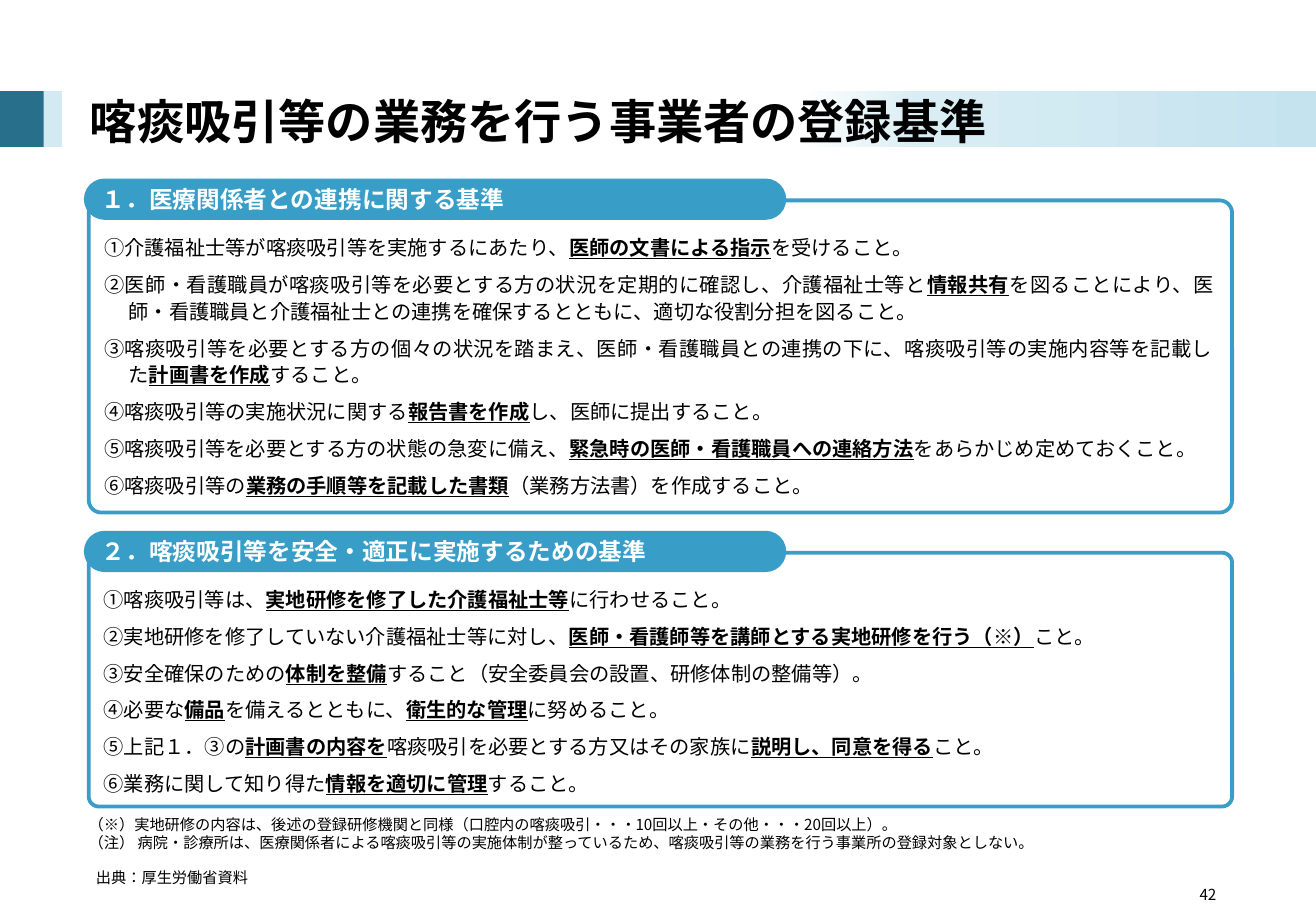
from collections import namedtuple
from copy import deepcopy
from dataclasses import dataclass

from lxml.etree import SubElement
from pptx import Presentation
from pptx.dml.color import RGBColor
from pptx.enum.lang import MSO_LANGUAGE_ID as Language
from pptx.enum.shapes import MSO_SHAPE as Shape
from pptx.enum.text import MSO_ANCHOR as Anchor, MSO_AUTO_SIZE as AutoSize, PP_ALIGN as Align
from pptx.oxml.ns import qn
from pptx.util import Emu, Pt

EMU_PER_PX = 9144
Box = namedtuple("Box", "left top width height")


@dataclass(frozen=True)
class Theme:
    font: str = "Noto Sans CJK JP"
    heading_font: str = "Cabin"
    ink: str = "000000"
    paper: str = "FFFFFF"
    accent: str = "399EC7"
    dark: str = "276F8B"
    pale: str = "D4EAF3"
    fade: tuple = ((0, "FFFFFF"), (0.23, "D9EDF4"), (1, "C5E3EF"))
    title_size: int = 28
    heading_size: int = 14
    body_size: int = 12
    note_size: int = 9
    border: float = 2.25


THEME = Theme()

TITLE = "喀痰吸引等の業務を行う事業者の登録基準"
COOPERATION = (
    "１．医療関係者との連携に関する基準",
    [
        "①介護福祉士等が喀痰吸引等を実施するにあたり、*医師の文書による指示*を受けること。",
        "②医師・看護職員が喀痰吸引等を必要とする方の状況を定期的に確認し、介護福祉士等と*情報共有*を図ることにより、"
        "医師・看護職員と介護福祉士との連携を確保するとともに、適切な役割分担を図ること。",
        "③喀痰吸引等を必要とする方の個々の状況を踏まえ、医師・看護職員との連携の下に、"
        "喀痰吸引等の実施内容等を記載した*計画書を作成*すること。",
        "④喀痰吸引等の実施状況に関する*報告書を作成*し、医師に提出すること。",
        "⑤喀痰吸引等を必要とする方の状態の急変に備え、*緊急時の医師・看護職員への連絡方法*をあらかじめ定めておくこと。",
        "⑥喀痰吸引等の*業務の手順等を記載した書類*（業務方法書）を作成すること。",
    ],
)
SAFETY = (
    "２．喀痰吸引等を安全・適正に実施するための基準",
    [
        "①喀痰吸引等は、*実地研修を修了した介護福祉士等*に行わせること。",
        "②実地研修を修了していない介護福祉士等に対し、*医師・看護師等を講師とする実地研修を行う（※）*こと。",
        "③安全確保のための*体制を整備*すること（安全委員会の設置、研修体制の整備等）。",
        "④必要な*備品*を備えるとともに、*衛生的な管理*に努めること。",
        "⑤上記１．③の*計画書の内容を*喀痰吸引を必要とする方又はその家族に*説明し、同意を得る*こと。",
        "⑥業務に関して知り得た*情報を適切に管理*すること。",
    ],
)
REMARKS = (
    "（※）実地研修の内容は、後述の登録研修機関と同様（口腔内の喀痰吸引・・・10回以上・その他・・・20回以上）。\n"
    "（注） 病院・診療所は、医療関係者による喀痰吸引等の実施体制が整っているため、"
    "喀痰吸引等の業務を行う事業所の登録対象としない。"
)
SOURCE = "出典：厚生労働省資料"
PAGE_NUMBER = "42"


def px(length):
    return Emu(length * EMU_PER_PX)


def color(value):
    return RGBColor.from_string(value)


def style(span, size, ink=THEME.ink, bold=False, underline=False, latin=THEME.font):
    font = span.font
    font.size, font.bold, font.underline = Pt(size), bold, underline
    font.color.rgb = color(ink)
    font.language_id = Language.JAPANESE
    font.name = latin
    SubElement(span._r.get_or_add_rPr(), qn("a:ea"), typeface=THEME.font)


def set_frame(frame, insets=(0, 0, 0, 0), anchor=Anchor.TOP, wrap=True):
    frame.auto_size = AutoSize.NONE
    frame.word_wrap = wrap
    frame.vertical_anchor = anchor
    frame.margin_left, frame.margin_top, frame.margin_right, frame.margin_bottom = map(px, insets)


def add_block(page, kind, box, fill, line=None, corner=None):
    block = page.shapes.add_shape(kind, *map(px, box))
    block.shadow.inherit = False
    block.fill.solid()
    block.fill.fore_color.rgb = color(fill)
    if line:
        block.line.color.rgb = color(line)
        block.line.width = Pt(THEME.border)
    else:
        block.line.fill.background()
    if corner is not None:
        block.adjustments[0] = corner
    return block


def add_note(page, box, text, align=Align.LEFT):
    frame = page.shapes.add_textbox(*map(px, box)).text_frame
    set_frame(frame)
    frame.text = text
    for para in frame.paragraphs:
        para.alignment = align
        for span in para.runs:
            style(span, THEME.note_size)


def fade_fill(fill):
    fill.gradient()
    fill.gradient_angle = 0
    stops = fill.gradient_stops
    stop_list = stops[0]._gs.getparent()
    stop_list.append(deepcopy(stops[0]._gs))
    for stop, (position, value) in zip(fill.gradient_stops, THEME.fade):
        stop.position = position
        stop.color.rgb = color(value)


def add_title_band(page, box):
    left, top, width, height = box
    add_block(page, Shape.RECTANGLE, Box(left, top, 38, height), THEME.dark)
    add_block(page, Shape.RECTANGLE, Box(left + 36, top, 15, height), THEME.pale)
    fade_left = left + 658
    fade = add_block(page, Shape.RECTANGLE, Box(fade_left, top, left + width - fade_left, height), THEME.paper)
    fade_fill(fade.fill)

    title = page.shapes.title
    page.shapes._spTree.append(title._element)
    title.left, title.top, title.width, title.height = map(px, Box(left + 74, top - 5, 934, 64))
    frame = title.text_frame
    set_frame(frame, anchor=Anchor.MIDDLE)
    frame.text = TITLE
    para = frame.paragraphs[0]
    para.alignment = Align.LEFT
    para.line_spacing = 0.9
    style(para.runs[0], THEME.title_size, bold=True)


def add_criterion(para, text):
    para.alignment = Align.JUSTIFY
    para.line_spacing = 1.1
    para.space_after = Pt(6)
    properties = para._p.get_or_add_pPr()
    properties.set("marL", str(px(20)))
    properties.set("indent", str(px(-20)))
    for index, part in enumerate(text.split("*")):
        span = para.add_run()
        span.text = part
        emphasis = index % 2 == 1
        style(span, THEME.body_size, bold=emphasis, underline=emphasis)


def add_section(page, box, heading, criteria):
    left, top, width, height = box
    card_box = Box(left + 4, top + 18, width - 4, height - 18)
    card = add_block(page, Shape.ROUNDED_RECTANGLE, card_box, THEME.paper, THEME.accent, 0.04)
    frame = card.text_frame
    set_frame(frame, (10, 24, 12, 0))
    for index, text in enumerate(criteria):
        add_criterion(frame.add_paragraph() if index else frame.paragraphs[0], text)

    tab = add_block(page, Shape.ROUNDED_RECTANGLE, Box(left, top, 578, 34), THEME.accent, corner=0.5)
    set_frame(tab.text_frame, (10, 5, 10, 5), Anchor.MIDDLE)
    tab.text_frame.text = heading
    para = tab.text_frame.paragraphs[0]
    para.alignment = Align.LEFT
    style(para.runs[0], THEME.heading_size, THEME.paper, bold=True, latin=THEME.heading_font)


def add_footer(page, box):
    left, top, width, height = box
    add_note(page, Box(left, top, width, 40), REMARKS)
    add_note(page, Box(left + 6, top + 44, 146, 20), SOURCE)
    add_note(page, Box(left + 684, top + 58, 244, 20), PAGE_NUMBER, Align.RIGHT)


def main():
    deck = Presentation()
    deck.slide_width, deck.slide_height = px(1083), px(750)
    page = deck.slides.add_slide(deck.slide_layouts.get_by_name("Title Only"))
    add_title_band(page, Box(0, 75, 1083, 46))
    add_section(page, Box(69, 147, 945, 275), *COOPERATION)
    add_section(page, Box(69, 437, 945, 227), *SAFETY)
    add_footer(page, Box(73, 671, 982, 79))
    deck.save("out.pptx")


if __name__ == "__main__":
    main()
